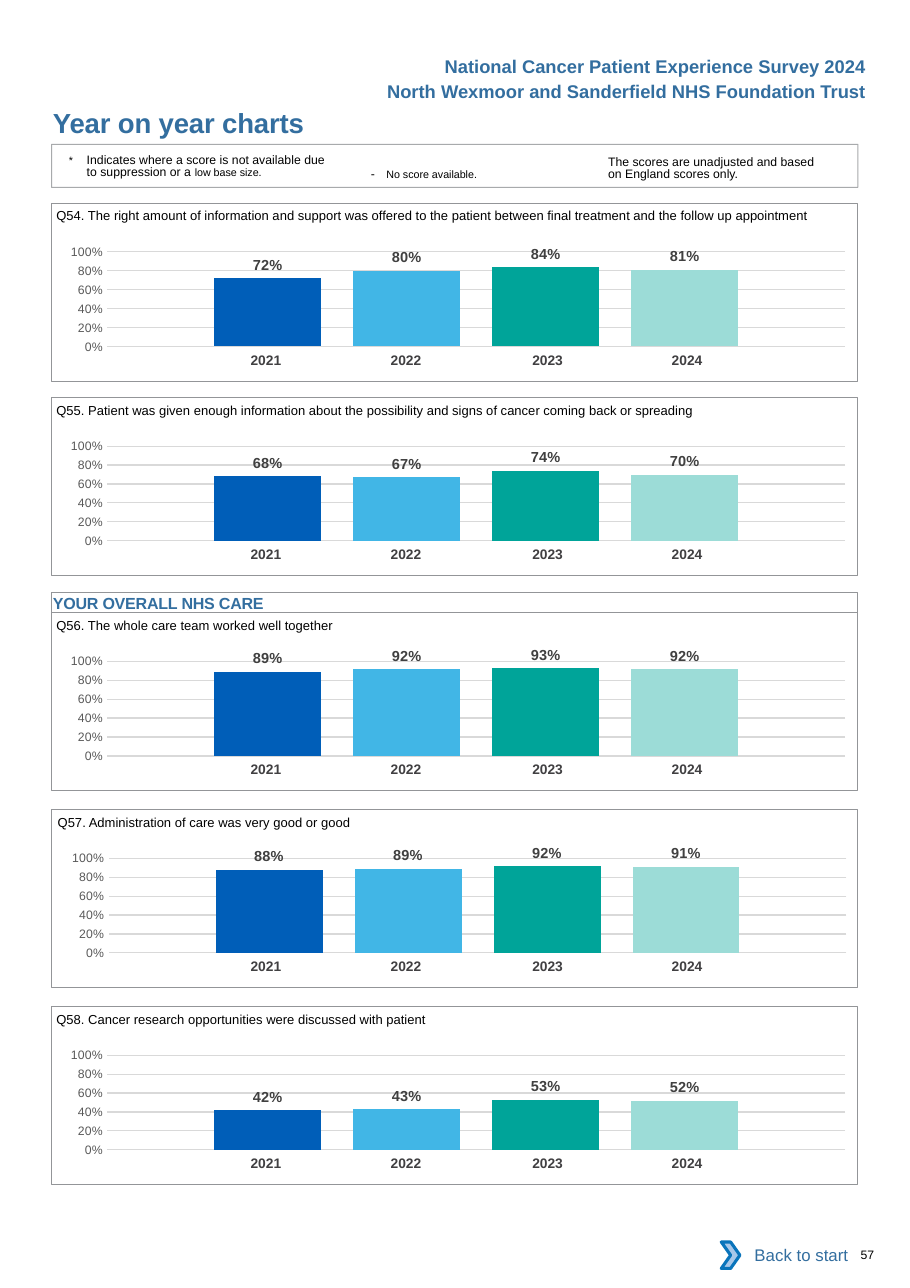
from lxml.etree import SubElement
from pptx import Presentation
from pptx.chart.data import CategoryChartData
from pptx.dml.color import RGBColor
from pptx.enum.chart import XL_CHART_TYPE, XL_LABEL_POSITION, XL_TICK_MARK
from pptx.enum.shapes import MSO_SHAPE
from pptx.enum.text import MSO_ANCHOR, PP_ALIGN
from pptx.oxml.ns import qn
from pptx.util import Cm, Pt

HUES = {
    "black": "000000", "title": "336E9F", "frame": "939598", "white": "FFFFFF",
    "year": "414042", "label": "404040", "axis": "595959", "grid": "D9D9D9",
    "arrow": "A8C7E9", "edge": "0A74BB",
}
BARS = {"2021": "005EB8", "2022": "41B6E6", "2023": "00A499", "2024": "9CDCD7"}
YEARS = list(BARS)

LEFT, WIDE, HIGH = 1.19, 18.59, 4.11  # panel frame

# Panel top, shift of its content, question, scores by year
PANELS = [
    (4.68, 0, "Q54. The right amount of information and support was offered to the "
     "patient between final treatment and the follow up appointment",
     (0.72, 0.80, 0.84, 0.81)),
    (9.16, 0, "Q55. Patient was given enough information about the possibility and "
     "signs of cancer coming back or spreading", (0.68, 0.67, 0.74, 0.70)),
    (14.12, 0, "Q56. The whole care team worked well together",
     (0.89, 0.92, 0.93, 0.92)),
    (18.66, 0.03, "Q57. Administration of care was very good or good",
     (0.88, 0.89, 0.92, 0.91)),
    (23.2, 0, "Q58. Cancer research opportunities were discussed with patient",
     (0.42, 0.43, 0.53, 0.52)),
]


def hue(code):
    return RGBColor.from_string(HUES.get(code, code))


def style(font, size, color, bold=False):
    font.name, font.size, font.bold = "Arial", Pt(size), bold
    font.color.rgb = hue(color)


def write(frame, text, size=8, color="black", bold=False, align=PP_ALIGN.LEFT,
          lead=None, hang=0, track=0):
    """Add a run to the first paragraph of a text frame."""
    para = frame.paragraphs[0]
    para.alignment = align
    if lead:
        para.line_spacing = Pt(lead)
    if hang:
        props = para._p.get_or_add_pPr()
        props.set("marL", str(Cm(hang)))
        props.set("indent", str(Cm(-hang)))
    run = para.add_run()
    run.text = text
    style(run.font, size, color, bold)
    if track:
        run.font._element.set("spc", str(track))


def pad(item, left=0, top=0, right=0, bottom=0):
    item.margin_left, item.margin_top = Cm(left), Cm(top)
    item.margin_right, item.margin_bottom = Cm(right), Cm(bottom)


def label(slide, spot, text, **form):
    frame = slide.shapes.add_textbox(*map(Cm, spot)).text_frame
    frame.word_wrap = True
    pad(frame)
    write(frame, text, **form)
    return frame


def block(slide, spot, kind=MSO_SHAPE.RECTANGLE, fill=None, line=None, weight=0.5):
    shape = slide.shapes.add_shape(kind, *map(Cm, spot))
    shape.shadow.inherit = False
    if fill:
        shape.fill.solid()
        shape.fill.fore_color.rgb = hue(fill)
    else:
        shape.fill.background()
    if line:
        shape.line.color.rgb = hue(line)
        shape.line.width = Pt(weight)
    else:
        shape.line.fill.background()
    return shape


def place(chart):
    """Fix the plot area and clear the chart background."""
    area = chart._chartSpace.chart.plotArea
    for old in area.findall(qn("c:layout")):
        area.remove(old)
    layout = SubElement(area, qn("c:layout"))
    area.insert(0, layout)
    manual = SubElement(layout, qn("c:manualLayout"))
    rules = {"layoutTarget": "inner", "xMode": "edge", "yMode": "edge",
             "x": 0.08, "y": 0.145, "w": 0.915, "h": 0.666}
    for tag, value in rules.items():
        SubElement(manual, qn("c:" + tag)).set("val", str(value))
    back = SubElement(chart._chartSpace, qn("c:spPr"))
    SubElement(back, qn("a:noFill"))
    SubElement(SubElement(back, qn("a:ln")), qn("a:noFill"))
    chart._chartSpace.find(qn("c:txPr")).addprevious(back)


def bars(slide, spot, scores):
    data = CategoryChartData(number_format="0%")
    data.categories = ["1"]
    for i, score in enumerate(scores, 1):
        data.add_series(f"Series {i}", [score])
    chart = slide.shapes.add_chart(
        XL_CHART_TYPE.COLUMN_CLUSTERED, *map(Cm, spot), data).chart
    chart.has_legend = chart.has_title = False
    chart.font.name, chart.font.size = "Calibri", Pt(10)
    chart.font.color.rgb = hue("black")
    place(chart)

    # Axes
    chart.category_axis.visible = False
    axis = chart.value_axis
    axis.minimum_scale, axis.maximum_scale, axis.major_unit = 0, 1, 0.2
    axis.major_tick_mark = axis.minor_tick_mark = XL_TICK_MARK.NONE
    axis.format.line.fill.background()
    grid = axis.major_gridlines.format.line
    grid.color.rgb, grid.width = hue("grid"), Pt(0.75)
    axis.tick_labels.number_format = "0%"
    axis.tick_labels.number_format_is_linked = False
    style(axis.tick_labels.font, 8, "axis")

    # Columns and their labels
    plot = chart.plots[0]
    plot.gap_width, plot.overlap, plot.vary_by_categories = 200, -30, False
    for series, color in zip(plot.series, BARS.values()):
        series.format.fill.solid()
        series.format.fill.fore_color.rgb = hue(color)
        tags = series.data_labels
        tags.show_value, tags.position = True, XL_LABEL_POSITION.OUTSIDE_END
        tags.number_format, tags.number_format_is_linked = "0%", False
        style(tags.font, 9.5, "label", True)


def years(slide, top):
    widths, rights = (3.23, 3.23, 3.4, 3.23), (0, 0, 0.1, 0.3)
    table = slide.shapes.add_table(
        1, len(YEARS), Cm(4.39), Cm(top), Cm(sum(widths)), Cm(0.69)).table
    table.first_row = table.horz_banding = False
    plain = "{2D5ABB26-0587-4C30-8999-92F81FD0307C}"
    table._tbl.tblPr.find(qn("a:tableStyleId")).text = plain
    for i, year in enumerate(YEARS):
        table.columns[i].width = Cm(widths[i])
        cell = table.cell(0, i)
        cell.fill.background()
        pad(cell, 0.25, 0.13, rights[i], 0.13)
        write(cell.text_frame, year, size=9, color="year", bold=True,
              align=PP_ALIGN.CENTER)


def panel(slide, top, shift, text, scores):
    bars(slide, (0.99 + shift, top + 0.65, WIDE, 3.28), scores)
    years(slide, top + 3.32)
    label(slide, (1.3 + shift, top + 0.11, 18.4, 0.4), text, size=8.5)
    block(slide, (LEFT, top, WIDE, HIGH), line="frame")


def notes(slide):
    box = block(slide, (LEFT, 3.33, WIDE, 0.99), line="frame", weight=0.75)
    tint = box._element.xpath(".//a:ln//a:srgbClr")[0]
    SubElement(tint, qn("a:alpha")).set("val", "80000")
    note = label(slide, (1.59, 3.56, 6, 0.6), "*\t", size=7, hang=0.41, lead=8.1)
    write(note, "Indicates where a score is not available due to suppression or a ",
          hang=0.41)
    write(note, "low base size.", size=7, hang=0.41)
    dash = label(slide, (8.55, 3.83, 4, 0.35), "-\t", hang=0.36)
    write(dash, "No score available.", size=7, hang=0.36)
    label(slide, (14.02, 3.61, 4.95, 0.6),
          "The scores are unadjusted and based on England scores only.", lead=8.1)


def main():
    deck = Presentation()
    deck.slide_width, deck.slide_height = Cm(20.98), Cm(29.69)
    slide = deck.slides.add_slide(deck.slide_layouts[6])

    # Headings
    heads = ("National Cancer Patient Experience Survey 2024",
             "North Wexmoor and Sanderfield NHS Foundation Trust")
    for i, head in enumerate(heads):
        label(slide, (7.5, 1.28 + 0.57 * i, 12.47, 0.5), head, size=12,
              color="title", bold=True, align=PP_ALIGN.RIGHT)
    label(slide, (1.22, 2.45, 11.4, 0.76), "Year on year charts", size=18,
          color="title", bold=True, track=-10)
    notes(slide)

    # Question panels
    for row in PANELS:
        panel(slide, *row)
    band = block(slide, (LEFT, 13.66, WIDE, 0.46), line="frame").text_frame
    band.vertical_anchor = MSO_ANCHOR.MIDDLE
    pad(band, 0.03, 0.03)
    write(band, "YOUR OVERALL NHS CARE", size=10.5, color="title", bold=True,
          track=-10)

    # Footer
    back = block(slide, (16.81, 28.4, 3, 1.07), fill="white").text_frame
    back.vertical_anchor = MSO_ANCHOR.MIDDLE
    write(back, "Back to start", size=11, color="title", align=PP_ALIGN.RIGHT)
    block(slide, (16.63, 28.63, 0.43, 0.61), MSO_SHAPE.CHEVRON, "arrow", "edge", 2)
    label(slide, (19.84, 28.76, 0.9, 0.35), "57")

    deck.save("out.pptx")


if __name__ == "__main__":
    main()
